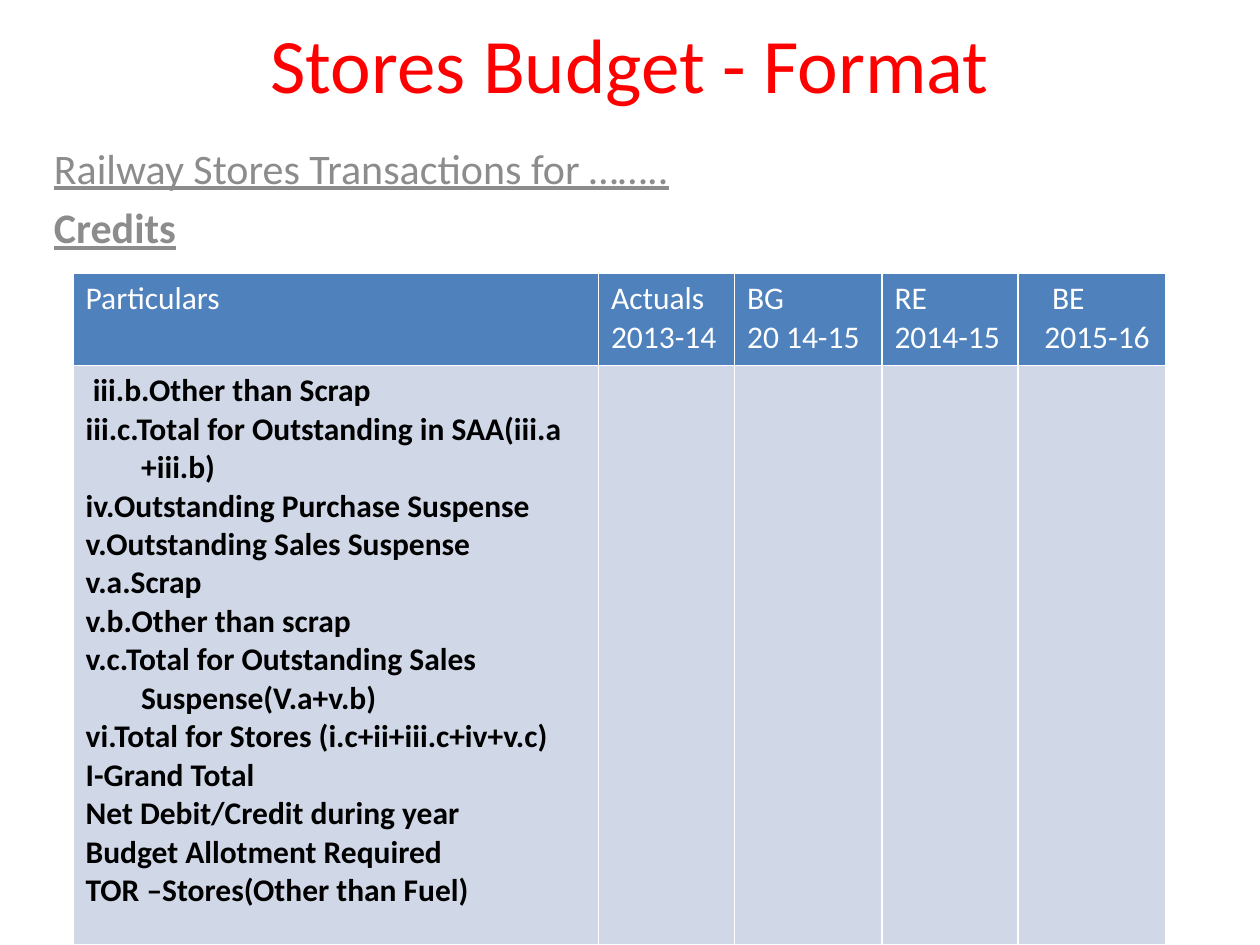
import pptx
import pptx.util
import pptx.dml.color
import pptx.enum.text

Inches = pptx.util.Inches
Pt = pptx.util.Pt
RGB = pptx.dml.color.RGBColor
ALIGN = pptx.enum.text.PP_ALIGN
ANCHOR = pptx.enum.text.MSO_ANCHOR

RED = RGB(0xFF, 0x00, 0x00)
GRAY = RGB(0x8C, 0x8C, 0x8C)
WHITE = RGB(0xFF, 0xFF, 0xFF)
BLACK = RGB(0x00, 0x00, 0x00)
BLUE = RGB(0x4F, 0x81, 0xBD)
PALE = RGB(0xD0, 0xD8, 0xE8)

# Font formats
TITLE = {"name": "Calibri", "size": Pt(44)}
LEAD = {"name": "Calibri", "size": Pt(24), "underline": True}
HEAD = {"name": "Calibri", "size": Pt(18), "bold": False}
BODY = HEAD | {"bold": True}

WIDTHS = [4.17, 1.08, 1.17, 1.08, 1.17]
HEIGHTS = [0.73, 4.6]
HEADS = [
    ["Particulars"],
    ["Actuals", "2013-14"],
    ["BG", "20 14-15"],
    ["RE", "2014-15"],
    ["BE", "2015-16"],
]
ITEMS = [
    " iii.b.Other than Scrap",
    "iii.c.Total for Outstanding in SAA(iii.a +iii.b)",
    "iv.Outstanding Purchase Suspense",
    "v.Outstanding Sales Suspense",
    "v.a.Scrap",
    "v.b.Other than scrap",
    "v.c.Total for Outstanding Sales Suspense(V.a+v.b)",
    "vi.Total for Stores (i.c+ii+iii.c+iv+v.c)",
    "I-Grand Total",
    "Net Debit/Credit during year",
    "Budget Allotment Required",
    "TOR –Stores(Other than Fuel)",
]


def write(frame, lines, form, color):
    """Fill a text frame with one paragraph per line."""
    for i, line in enumerate(lines):
        para = frame.add_paragraph() if i else frame.paragraphs[0]
        run = para.add_run()
        run.text = line
        for key, value in form.items():
            setattr(run.font, key, value)
        run.font.color.rgb = color
    return frame.paragraphs


def indent(para, left, first=0):
    """Set the left margin and first-line indent of a paragraph."""
    props = para._p.get_or_add_pPr()
    props.set("marL", str(Inches(left)))
    props.set("indent", str(Inches(first)))


def add_text(slide, box, lines, form, color, anchor):
    shape = slide.shapes.add_textbox(*map(Inches, box))
    frame = shape.text_frame
    frame.word_wrap = True
    frame.vertical_anchor = anchor
    return write(frame, lines, form, color)


def add_grid(slide):
    frame = slide.shapes.add_table(
        len(HEIGHTS), len(WIDTHS), Inches(0.58), Inches(2.17),
        Inches(sum(WIDTHS)), Inches(sum(HEIGHTS)))
    grid = frame.table
    for col, width in zip(grid.columns, WIDTHS):
        col.width = Inches(width)
    for row, height, fill in zip(grid.rows, HEIGHTS, (BLUE, PALE)):
        row.height = Inches(height)
        for cell in row.cells:
            cell.fill.solid()
            cell.fill.fore_color.rgb = fill
    return grid


def main():
    deck = pptx.Presentation()
    deck.slide_width = Inches(10)
    deck.slide_height = Inches(7.5)
    slide = deck.slides.add_slide(deck.slide_layouts[6])

    # Title
    paras = add_text(slide, (0.75, 0.08, 8.5, 0.83),
                     ["Stores Budget - Format"], TITLE, RED, ANCHOR.MIDDLE)
    paras[0].alignment = ALIGN.CENTER

    # Subtitle
    paras = add_text(slide, (0.33, 1.08, 9.33, 5.83),
                     ["Railway Stores Transactions for ……..", "Credits"],
                     LEAD, GRAY, ANCHOR.TOP)
    for para in paras:
        para.alignment = ALIGN.JUSTIFY
        para.space_before = Pt(5)
    paras[1].runs[0].font.bold = True

    # Table header
    grid = add_grid(slide)
    for col, lines in enumerate(HEADS):
        paras = write(grid.cell(0, col).text_frame, lines, HEAD, WHITE)
    for para, left in zip(paras, (0.17, 0.11)):
        indent(para, left)

    # Table body
    for para in write(grid.cell(1, 0).text_frame, ITEMS, BODY, BLACK):
        indent(para, 0.44, -0.44)

    deck.save("out.pptx")


if __name__ == "__main__":
    main()
